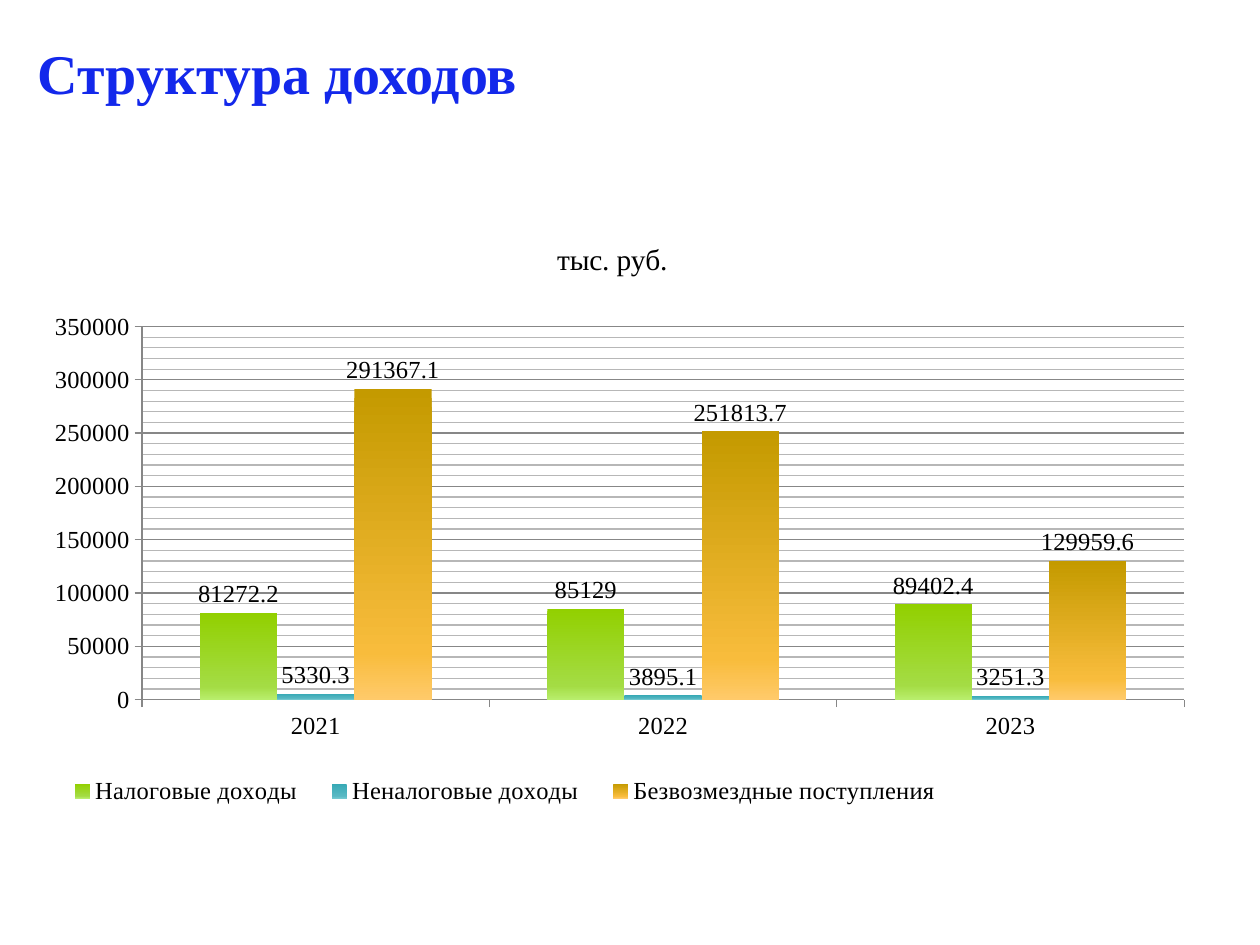
from lxml import etree
from pptx import Presentation
from pptx import util as u
from pptx.chart.data import CategoryChartData
from pptx.dml.color import RGBColor
from pptx.enum import chart as charts, text
from pptx.oxml import ns

PX = 914400 // 126
THEME = {
    "font": "Times New Roman",
    "heading": "1328EB", "text": "000000", "major": "878787", "minor": "B7B7B7",
    "heading_size": 32, "unit_size": 16.8, "chart_size": 14,
    "gradients": [
        ("92D000", "A4DC44", "B8EE6C"),
        ("36A9B5", "59B9C4", "72C8D0"),
        ("C49A00", "F8BC3C", "FFCA6A"),
    ],
}
STOPS = (0, 85, 100)


def style_font(font, size, color, bold=False):
    values = {"name": THEME["font"], "size": u.Pt(size), "bold": bold}
    for name, value in values.items():
        setattr(font, name, value)
    font.color.rgb = RGBColor.from_string(color)


def place(parent, index, values):
    for old in parent.findall(ns.qn("c:layout")):
        parent.remove(old)
    layout = etree.Element(ns.qn("c:layout"))
    manual = etree.SubElement(layout, ns.qn("c:manualLayout"))
    for tag, value in values.items():
        etree.SubElement(manual, ns.qn("c:" + tag)).set("val", str(value))
    parent.insert(index, layout)


presentation = Presentation()
presentation.slide_width = 1260 * PX
presentation.slide_height = 945 * PX
slide = presentation.slides.add_slide(presentation.slide_layouts[6])

data = CategoryChartData()
data.categories = ["2021", "2022", "2023"]
data.add_series("Налоговые доходы", (81272.2, 85129, 89402.4))
data.add_series("Неналоговые доходы", (5330.3, 3895.1, 3251.3))
data.add_series("Безвозмездные поступления", (291367.1, 251813.7, 129959.6))
chart = slide.shapes.add_chart(
    charts.XL_CHART_TYPE.COLUMN_CLUSTERED,
    25 * PX, 214 * PX, 1171 * PX, 704 * PX, data).chart
style_font(chart.font, THEME["chart_size"], THEME["text"])

chart.has_title = True
chart.chart_title.include_in_layout = False
unit = chart.chart_title.text_frame
unit.text = "тыс. руб."
style_font(unit.paragraphs[0].runs[0].font, THEME["unit_size"], THEME["text"])

chart.has_legend = True
chart.legend.position = charts.XL_LEGEND_POSITION.BOTTOM
chart.legend.include_in_layout = False

plot = chart.plots[0]
for name, value in {"gap_width": 150, "overlap": 0, "vary_by_categories": False,
                    "has_data_labels": True}.items():
    setattr(plot, name, value)
for name, value in {"show_value": True, "number_format": "General",
                    "number_format_is_linked": False,
                    "position": charts.XL_LABEL_POSITION.OUTSIDE_END}.items():
    setattr(plot.data_labels, name, value)
style_font(plot.data_labels.font, THEME["chart_size"], THEME["text"])

for series, colors in zip(plot.series, THEME["gradients"]):
    series.invert_if_negative = False
    series.format.fill.gradient()
    gradient = series.format.fill._fill._gradFill
    for child in list(gradient):
        gradient.remove(child)
    stops = etree.SubElement(gradient, ns.qn("a:gsLst"))
    for position, color in zip(STOPS, colors):
        stop = etree.SubElement(stops, ns.qn("a:gs"), pos=str(position * 1000))
        etree.SubElement(stop, ns.qn("a:srgbClr"), val=color)
    etree.SubElement(gradient, ns.qn("a:lin"), ang="5400000", scaled="0")

value_axis = chart.value_axis
for name, value in {"minimum_scale": 0, "maximum_scale": 350000,
                    "major_unit": 50000, "minor_unit": 10000,
                    "has_major_gridlines": True,
                    "has_minor_gridlines": True}.items():
    setattr(value_axis, name, value)
value_axis.tick_labels.number_format = "General"
value_axis.tick_labels.number_format_is_linked = False
for axis in (chart.category_axis, value_axis):
    axis.major_tick_mark = charts.XL_TICK_MARK.OUTSIDE
    style_font(axis.tick_labels.font, THEME["chart_size"], THEME["text"])
for part in (chart.category_axis, value_axis, value_axis.major_gridlines):
    part.format.line.width = u.Pt(0.75)
    part.format.line.color.rgb = RGBColor.from_string(THEME["major"])

minor_gridlines = value_axis._element.find(ns.qn("c:minorGridlines"))
properties = etree.SubElement(minor_gridlines, ns.qn("c:spPr"))
line = etree.SubElement(properties, ns.qn("a:ln"), w=str(u.Pt(0.75)))
fill = etree.SubElement(line, ns.qn("a:solidFill"))
etree.SubElement(fill, ns.qn("a:srgbClr"), val=THEME["minor"])

edges = {"xMode": "edge", "yMode": "edge"}
place(chart.chart_title._element, 1, {**edges, "x": 0.45, "y": 0.03})
place(chart.legend._element, 1, {**edges, "x": 0.02, "y": 0.79, "w": 0.78, "h": 0.06})
place(chart._chartSpace.chart.plotArea, 0,
      {"layoutTarget": "inner", **edges, "x": 0.1, "y": 0.16, "w": 0.89, "h": 0.53})

heading = slide.shapes.add_textbox(25 * PX, 26 * PX, 1172 * PX, 169 * PX).text_frame
for name, value in {"word_wrap": True, "vertical_anchor": text.MSO_ANCHOR.TOP,
                    "margin_left": 13 * PX, "margin_top": 13 * PX}.items():
    setattr(heading, name, value)
heading.text = "Структура доходов"
style_font(heading.paragraphs[0].runs[0].font, THEME["heading_size"], THEME["heading"], True)

presentation.save("out.pptx")
